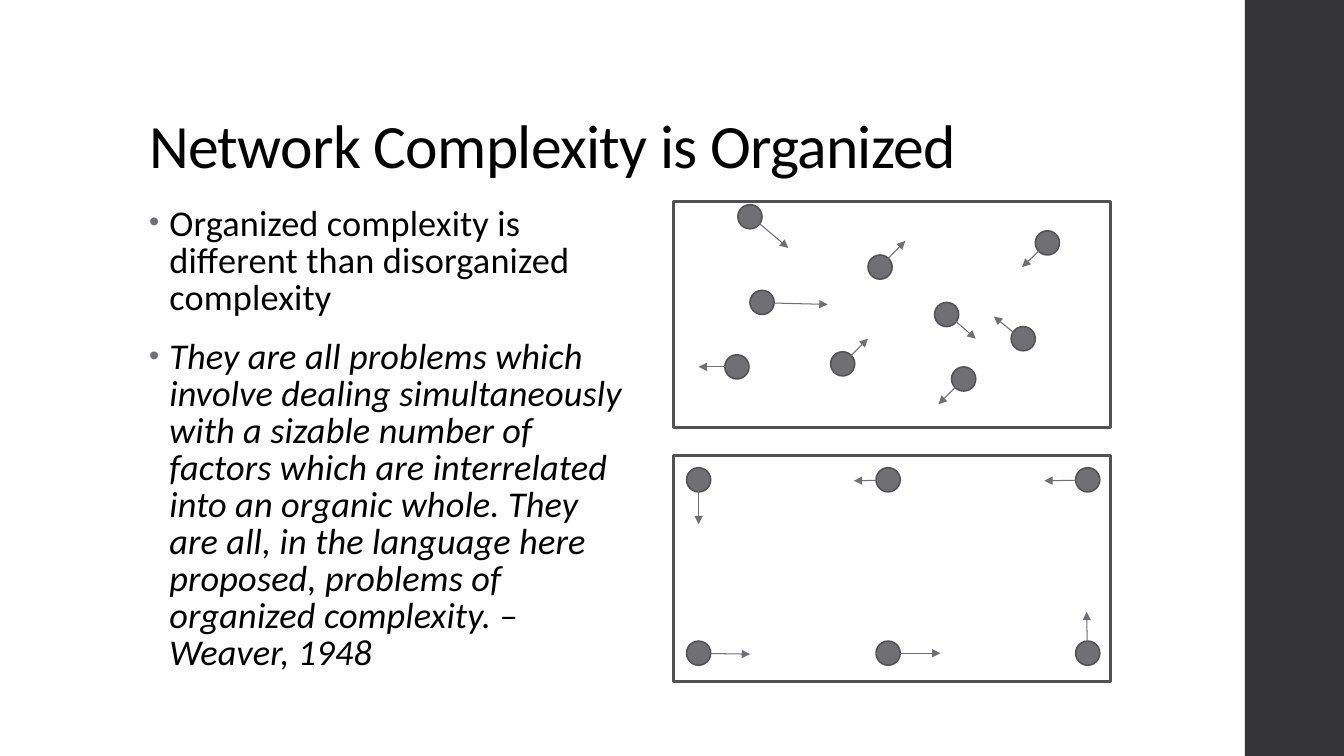
import math
from dataclasses import dataclass
from itertools import product

from lxml import etree
from pptx import Presentation
from pptx import util as u
from pptx.dml import color
from pptx.enum import shapes, text
from pptx.oxml import ns


@dataclass(frozen=True)
class Theme:
    font: str = "Calibri"
    ink: str = "000000"
    paper: str = "FFFFFF"
    sidebar: str = "353537"
    accent: str = "6F6F74"
    outline: str = "525256"
    title_size: float = 44
    body_size: float = 25.9
    frame_line: float = 2.25
    dot_line: float = 1.1
    arrow_line: float = 0.75


@dataclass(frozen=True)
class Area:
    column: float
    row: float
    columns: float
    rows: float


@dataclass(frozen=True)
class Particle:
    column: float
    row: float
    move_columns: float
    move_rows: float


THEME = Theme()
WIDTH, HEIGHT = u.Inches(13.33), u.Inches(7.5)
COLUMN, ROW = WIDTH / 100, HEIGHT / 100
RADIUS = 0.9 * COLUMN

SIDEBAR = Area(92.63, 0, 7.37, 100)
TITLE = Area(10.35, 5.33, 79.5, 19.33)
BODY = Area(10.35, 26.67, 36.75, 63.47)
FRAMES = [Area(50.1, row, 32.55, 29.87) for row in (26.67, 60.27)]

DISORGANIZED = [
    Particle(55.8, 28.67, 2.85, 4.13),
    Particle(65.48, 35.33, 1.87, -3.46),
    Particle(77.93, 32.13, -1.88, 3.2),
    Particle(56.7, 40, 4.88, 0.27),
    Particle(54.83, 48.53, -2.85, 0),
    Particle(62.7, 48.13, 1.88, -3.33),
    Particle(71.7, 50.13, -1.87, 3.34),
    Particle(70.43, 41.6, 2.17, 3.2),
    Particle(76.13, 44.8, -2.18, -2.93),
]
CIRCULATION = [(0, 5.87), (-2.55, 0.13), (-3.23, 0.13),
               (3.83, 0.13), (3.9, 0), (-0.08, -5.47)]
ORGANIZED = [
    Particle(column, row, *move)
    for (row, column), move in zip(
        product((63.47, 86.4), (51.98, 66.08, 80.93)), CIRCULATION)
]

QUOTE = (
    "They are all problems which involve dealing simultaneously with a sizable "
    "number of factors which are interrelated into an organic whole. They are all, "
    "in the language here proposed, problems of organized complexity. –Weaver, 1948"
)


def rgb(value: str) -> color.RGBColor:
    return color.RGBColor.from_string(value)


def box(area: Area) -> list[int]:
    return [round(length) for length in (area.column * COLUMN, area.row * ROW,
                                         area.columns * COLUMN, area.rows * ROW)]


def place(shape, area: Area) -> None:
    shape.left, shape.top, shape.width, shape.height = box(area)


def write(paragraph, words: str, *, size: float, line_spacing: float,
          tracking: int, italic: bool = False) -> None:
    paragraph.alignment = text.PP_ALIGN.LEFT
    paragraph.line_spacing = line_spacing
    run = paragraph.add_run()
    run.text = words
    run.font.name = THEME.font
    run.font.size = u.Pt(size)
    run.font.italic = italic
    run.font.color.rgb = rgb(THEME.ink)
    run.font._element.set("spc", str(tracking))


def add_bullet(paragraph) -> None:
    paragraph.space_before, paragraph.space_after = u.Pt(14), u.Pt(2)
    properties = paragraph._p.get_or_add_pPr()
    properties.set("marL", str(u.Inches(0.2)))
    properties.set("indent", str(-u.Inches(0.2)))
    bullet_color = etree.SubElement(properties, ns.qn("a:buClr"))
    etree.SubElement(bullet_color, ns.qn("a:srgbClr"), val=THEME.accent)
    etree.SubElement(properties, ns.qn("a:buSzPct"), val="80000")
    etree.SubElement(properties, ns.qn("a:buFont"), typeface="Arial")
    etree.SubElement(properties, ns.qn("a:buChar"), char="•")


def add_shape(slide, kind, area: Area, fill: str, line_width: float = 0) -> None:
    shape = slide.shapes.add_shape(kind, *box(area))
    shape.shadow.inherit = False
    shape.fill.solid()
    shape.fill.fore_color.rgb = rgb(fill)
    if line_width:
        shape.line.color.rgb = rgb(THEME.outline)
        shape.line.width = u.Pt(line_width)
    else:
        shape.line.fill.background()


def add_dot(slide, particle: Particle) -> None:
    columns, rows = RADIUS / COLUMN, RADIUS / ROW
    area = Area(particle.column - columns, particle.row - rows, 2 * columns, 2 * rows)
    add_shape(slide, shapes.MSO_SHAPE.OVAL, area, THEME.accent, THEME.dot_line)


def add_arrow(slide, particle: Particle) -> None:
    x, y = particle.column * COLUMN, particle.row * ROW
    across, down = particle.move_columns * COLUMN, particle.move_rows * ROW
    octant = math.pi / 4
    angle = round(math.atan2(down, across) / octant) * octant
    ends = (x - RADIUS * math.cos(angle), y - RADIUS * math.sin(angle),
            x + across, y + down)
    connector = slide.shapes.add_connector(
        shapes.MSO_CONNECTOR.STRAIGHT, *(round(end) for end in ends))
    connector.line.color.rgb = rgb(THEME.accent)
    connector.line.width = u.Pt(THEME.arrow_line)
    etree.SubElement(connector.line._get_or_add_ln(), ns.qn("a:tailEnd"), type="triangle")
    etree.SubElement(connector._element.spPr, ns.qn("a:effectLst"))


def add_particles(slide, particles: list[Particle]) -> None:
    for particle in particles:
        add_dot(slide, particle)
    for particle in particles:
        add_arrow(slide, particle)


def fill_placeholders(slide) -> None:
    title, body = slide.shapes.title, slide.placeholders[1]
    for placeholder, area, anchor in ((title, TITLE, text.MSO_ANCHOR.BOTTOM),
                                      (body, BODY, text.MSO_ANCHOR.TOP)):
        place(placeholder, area)
        frame = placeholder.text_frame
        frame.word_wrap = True
        frame.auto_size = text.MSO_AUTO_SIZE.NONE
        frame.vertical_anchor = anchor
    write(title.text_frame.paragraphs[0], "Network Complexity is Organized",
          size=THEME.title_size, line_spacing=0.9, tracking=-50)
    definition, quote = body.text_frame.paragraphs[0], body.text_frame.add_paragraph()
    for paragraph, words, italic in (
        (definition, "Organized complexity is different than disorganized complexity", False),
        (quote, QUOTE, True),
    ):
        write(paragraph, words, size=THEME.body_size, line_spacing=0.85,
              tracking=10, italic=italic)
        add_bullet(paragraph)


def main() -> None:
    presentation = Presentation()
    presentation.slide_width, presentation.slide_height = WIDTH, HEIGHT
    slide = presentation.slides.add_slide(presentation.slide_layouts[1])
    slide.background.fill.solid()
    slide.background.fill.fore_color.rgb = rgb(THEME.paper)
    fill_placeholders(slide)
    add_shape(slide, shapes.MSO_SHAPE.RECTANGLE, SIDEBAR, THEME.sidebar)
    for frame in FRAMES:
        add_shape(slide, shapes.MSO_SHAPE.RECTANGLE, frame, THEME.paper, THEME.frame_line)
    for particles in (DISORGANIZED, ORGANIZED):
        add_particles(slide, particles)
    presentation.save("out.pptx")


if __name__ == "__main__":
    main()
